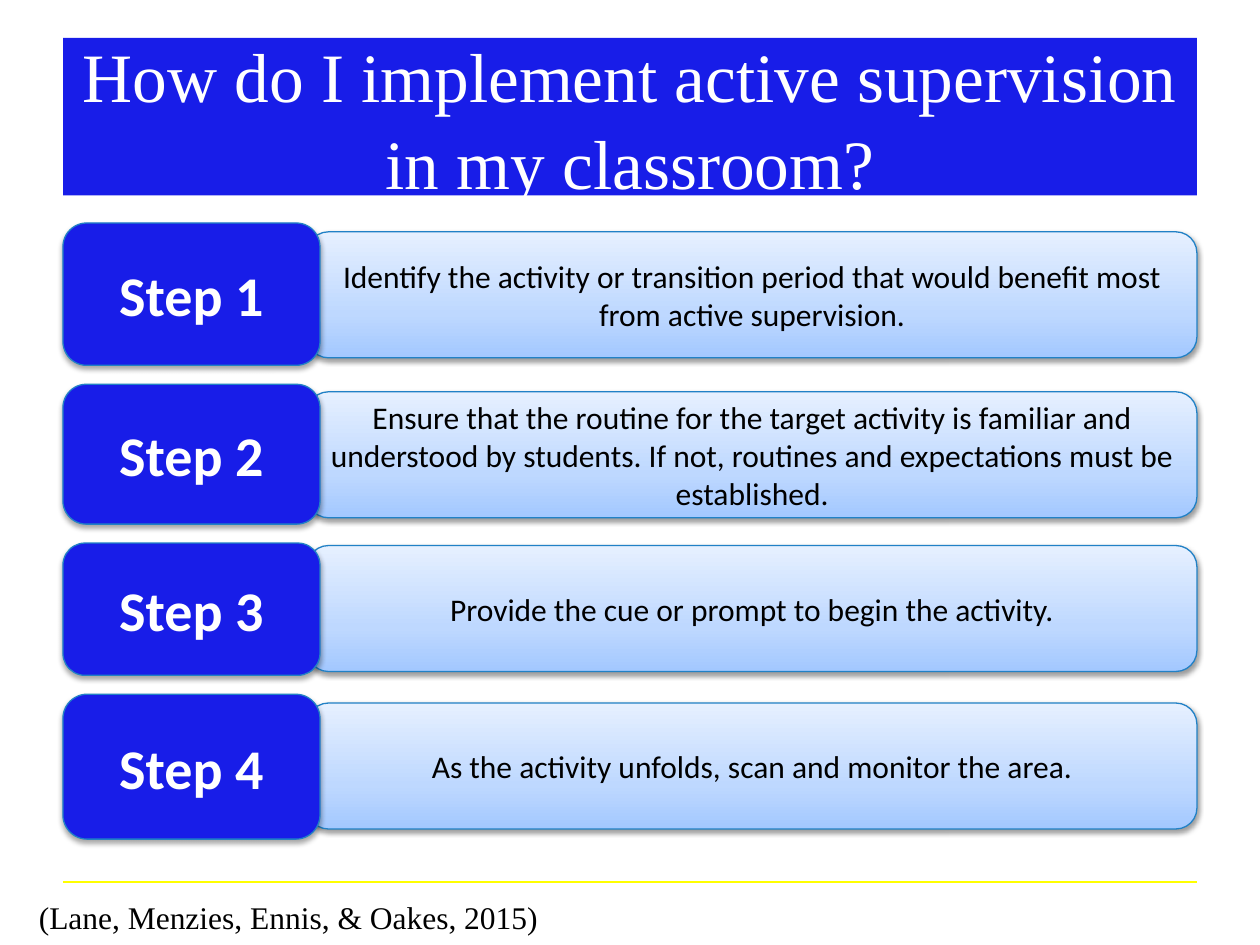
"""Build the slide of four steps for implementing active supervision."""
import copy

import lxml.etree
import pptx
import pptx.dml.color
import pptx.enum.shapes
import pptx.enum.text
import pptx.oxml.ns
import pptx.util

Inches = pptx.util.Inches
Pt = pptx.util.Pt
RGB = pptx.dml.color.RGBColor.from_string
qn = pptx.oxml.ns.qn
ALIGN = pptx.enum.text.PP_ALIGN
ANCHOR = pptx.enum.text.MSO_ANCHOR

COLORS = {
    "blue": "181DE8",
    "outline": "2181C6",
    "rule": "FFFF00",
    "white": "FFFFFF",
    "black": "000000",
    "pale bottom": "A3C8FF",
    "pale middle": "BED8FF",
    "pale top": "E6F0FF",
}
GRADIENT = [(0, "pale bottom"), (0.35, "pale middle"), (1, "pale top")]
STEPS = [
    (1.84, 1.77, 1.13, "Identify the activity or transition period that would "
     "benefit most from active supervision."),
    (3.11, 3.05, 1.11, "Ensure that the routine for the target activity is familiar and "
     "understood by students. If not, routines and expectations must be established."),
    (4.33, 4.31, 1.05, "Provide the cue or prompt to begin the activity."),
    (5.58, 5.51, 1.15, "As the activity unfolds, scan and monitor the area."),
]


def write(shape, text, size, font="Calibri", color="black", bold=False,
          align=ALIGN.CENTER, anchor=ANCHOR.MIDDLE, spacing=1.0):
    frame = shape.text_frame
    frame.word_wrap = True
    frame.auto_size = pptx.enum.text.MSO_AUTO_SIZE.NONE
    frame.vertical_anchor = anchor
    paragraph = frame.paragraphs[0]
    paragraph.alignment = align
    paragraph.line_spacing = spacing
    run = paragraph.add_run()
    run.text = text
    run.font.name = font
    run.font.size = Pt(size)
    run.font.bold = bold
    run.font.color.rgb = RGB(COLORS[color])


def add_box(left, top, width, height, shadow_distance, shadow_opacity):
    box = slide.shapes.add_shape(
        pptx.enum.shapes.MSO_SHAPE.ROUNDED_RECTANGLE,
        Inches(left), Inches(top), Inches(width), Inches(height))
    box.adjustments[0] = 0.167
    box.line.color.rgb = RGB(COLORS["outline"])
    box.line.width = Pt(0.75)
    box.shadow.inherit = False
    effects = box._element.spPr.find(qn("a:effectLst"))
    shadow = lxml.etree.SubElement(
        effects, qn("a:outerShdw"), blurRad=str(Pt(3.1)),
        dist=str(Pt(shadow_distance)), dir="5400000", rotWithShape="0")
    tint = lxml.etree.SubElement(shadow, qn("a:srgbClr"), val=COLORS["black"])
    lxml.etree.SubElement(tint, qn("a:alpha"), val=str(shadow_opacity * 1000))
    return box


presentation = pptx.Presentation()
presentation.slide_width = Inches(10)
presentation.slide_height = Inches(7.5)
slide = presentation.slides.add_slide(presentation.slide_layouts[5])

rule = slide.shapes.add_connector(
    pptx.enum.shapes.MSO_CONNECTOR.STRAIGHT,
    Inches(0.5), Inches(7), Inches(9.5), Inches(7))
rule.line.color.rgb = RGB(COLORS["rule"])
rule.line.width = Pt(0.75)
lxml.etree.SubElement(rule._element.spPr, qn("a:effectLst"))

heading = slide.shapes.title
heading.left, heading.top = Inches(0.5), Inches(0.3)
heading.width, heading.height = Inches(9), Inches(1.25)
heading.fill.solid()
heading.fill.fore_color.rgb = RGB(COLORS["blue"])
write(heading, "How do I implement active supervision in my classroom?",
      size=39.6, font="Times New Roman", color="white", spacing=1.05)

for top, _, _, instruction in STEPS:
    panel = add_box(2.44, top, 7.06, 1, shadow_distance=1.6, shadow_opacity=38)
    panel.fill.gradient()
    panel.fill.gradient_angle = 90
    stop_list = panel._element.spPr.find(qn("a:gradFill")).find(qn("a:gsLst"))
    stop_list.append(copy.deepcopy(stop_list[0]))
    for stop, (position, shade) in zip(panel.fill.gradient_stops, GRADIENT):
        stop.position = position
        stop.color.rgb = RGB(COLORS[shade])
    write(panel, instruction, size=18)

for number, (_, top, height, _) in enumerate(STEPS, 1):
    step = add_box(0.5, top, 2.04, height, shadow_distance=1.8, shadow_opacity=35)
    step.fill.solid()
    step.fill.fore_color.rgb = RGB(COLORS["blue"])
    write(step, f"Step {number}", size=32, color="white", bold=True)

citation = slide.shapes.add_textbox(Inches(0.21), Inches(7.08), Inches(6.6), Inches(0.4))
write(citation, "(Lane, Menzies, Ennis, & Oakes, 2015)", size=18,
      font="Times New Roman", align=ALIGN.LEFT, anchor=ANCHOR.TOP)

presentation.save("out.pptx")
